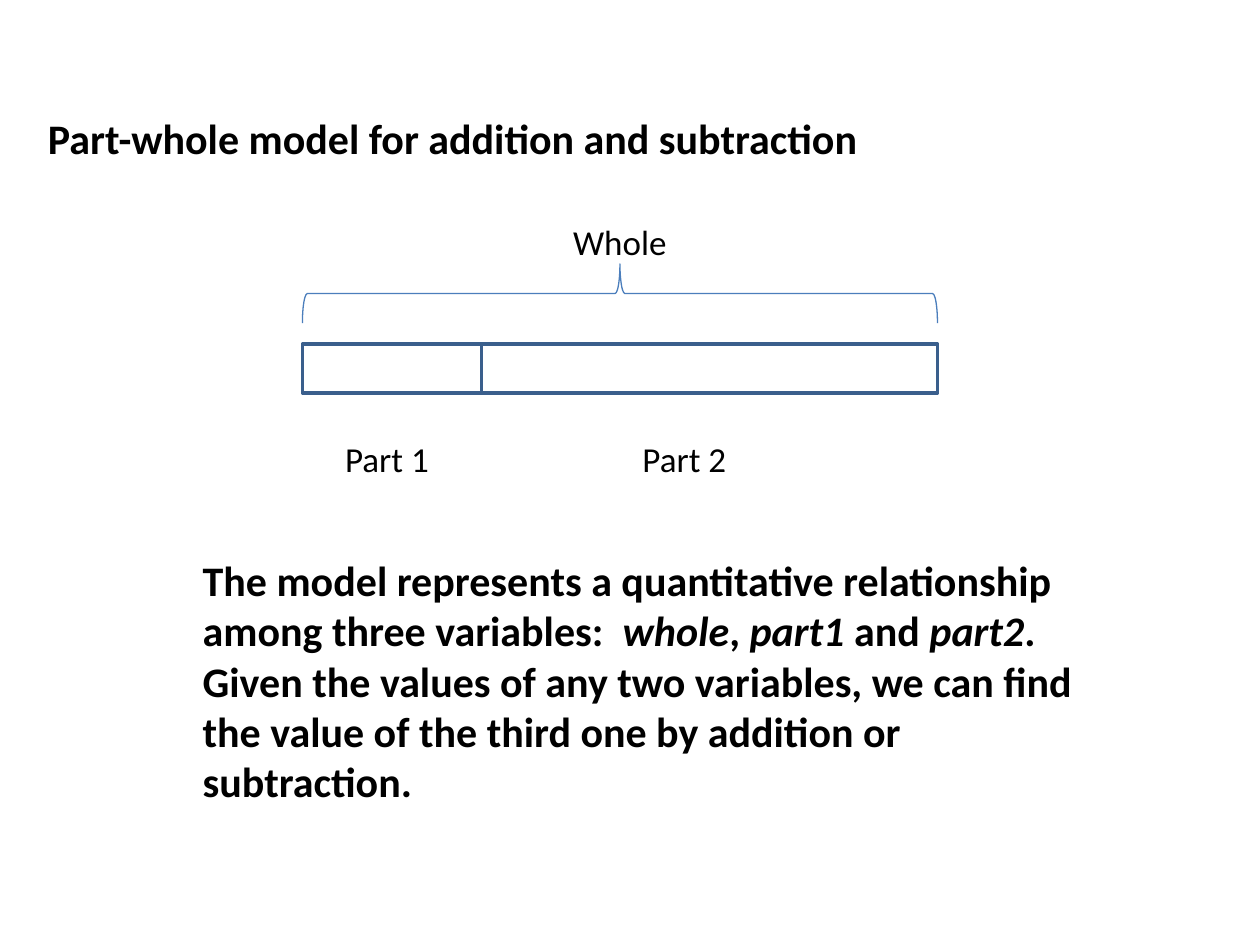
from pptx import Presentation
from pptx.dml.color import RGBColor
from pptx.enum.shapes import MSO_SHAPE as Shape
from pptx.enum.text import MSO_ANCHOR as Anchor, PP_ALIGN as Align
from pptx.util import Inches, Pt


def color(value):
    return RGBColor.from_string(value)


def write(paragraph, text, size, bold=False, italic=False):
    run = paragraph.add_run()
    run.text = text
    run.font.name = "Calibri"
    run.font.size = Pt(size)
    run.font.bold = bold
    run.font.italic = italic
    run.font.color.rgb = color("000000")


presentation = Presentation()
presentation.slide_width = Inches(10)
presentation.slide_height = Inches(7.5)
slide = presentation.slides.add_slide(presentation.slide_layouts[5])

title = slide.shapes.title
title.left, title.top = Inches(0.28), Inches(0.29)
title.width, title.height = Inches(9.53), Inches(1.61)
title.text_frame.vertical_anchor = Anchor.MIDDLE
paragraph = title.text_frame.paragraphs[0]
paragraph.alignment = Align.LEFT
write(paragraph, "Part-whole model for addition and subtraction", 24, bold=True)

explanation = slide.shapes.add_textbox(Inches(1.51), Inches(4.35), Inches(7.42), Inches(2.12))
explanation.text_frame.word_wrap = True
for text, italic in [
    ("The model represents a quantitative relationship among three variables:  ", False),
    ("whole", True),
    (", ", False),
    ("part1", True),
    (" and ", False),
    ("part2", True),
    (".  Given the values of any two variables, we can find the value of "
     "the third one by addition or subtraction.", False),
]:
    write(explanation.text_frame.paragraphs[0], text, 24, bold=True, italic=italic)

bar_left = 2.4
part_widths = [1.42, 3.62]
whole_width = sum(part_widths)

part_left = bar_left
for width in part_widths:
    part = slide.shapes.add_shape(
        Shape.RECTANGLE, Inches(part_left), Inches(2.73), Inches(width), Inches(0.39))
    part.shadow.inherit = False
    part.fill.background()
    part.line.color.rgb = color("3A5F8C")
    part.line.width = Pt(2)
    part_left += width

for text, left, top in [("Part 1", 2.64, 3.42), ("Part 2", 5, 3.42), ("Whole", 4.45, 1.7)]:
    label = slide.shapes.add_textbox(Inches(left), Inches(top), Inches(1.18), Inches(0.44))
    label.text_frame.word_wrap = True
    write(label.text_frame.paragraphs[0], text, 20)

brace_depth = 0.47
brace_center_x = bar_left + whole_width / 2
brace_center_y = 2.33
brace = slide.shapes.add_shape(
    Shape.LEFT_BRACE,
    Inches(brace_center_x - brace_depth / 2), Inches(brace_center_y - whole_width / 2),
    Inches(brace_depth), Inches(whole_width))
brace.rotation = 90
brace.shadow.inherit = False
brace.fill.background()
brace.line.color.rgb = color("4B7EBC")
brace.line.width = Pt(0.75)

presentation.save("out.pptx")
